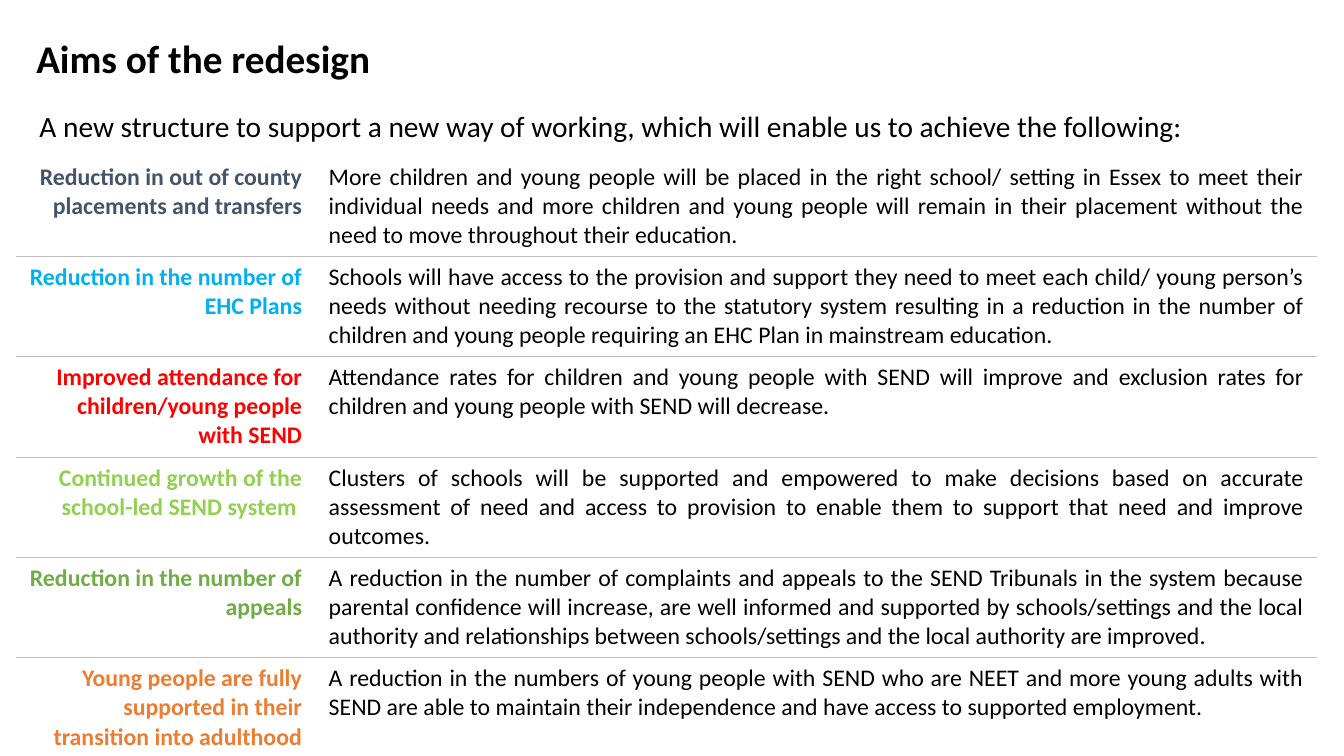
from dataclasses import dataclass

from lxml import etree
from pptx import Presentation
from pptx.dml.color import RGBColor
from pptx.enum.text import MSO_ANCHOR, MSO_AUTO_SIZE, PP_ALIGN
from pptx.oxml.ns import qn
from pptx.util import Pt

LEFT, RIGHT, JUSTIFY = PP_ALIGN.LEFT, PP_ALIGN.RIGHT, PP_ALIGN.JUSTIFY
TOP = MSO_ANCHOR.TOP
FIXED_SIZE = MSO_AUTO_SIZE.NONE
TITLE_ONLY = 5
FONT = "Calibri"
BLACK = "000000"
RULE_GREY = "BFBFBF"
INSET_X, INSET_Y = 9.5, 4.6
COLUMN_WIDTHS = (213.8, 715.7)


@dataclass(frozen=True)
class Aim:
    heading: str
    colour: str
    detail: str
    height: float = 70


AIMS = [
    Aim(
        "Reduction in out of county placements and transfers",
        "44546A",
        "More children and young people will be placed in the right school/ setting in Essex "
        "to meet their individual needs and more children and young people will remain in "
        "their placement without the need to move throughout their education.",
    ),
    Aim(
        "Reduction in the number of EHC Plans",
        "00B0F0",
        "Schools will have access to the provision and support they need to meet each child/ "
        "young person’s needs without needing recourse to the statutory system resulting in "
        "a reduction in the number of children and young people requiring an EHC Plan in "
        "mainstream education. ",
    ),
    Aim(
        "Improved attendance for children/young people with SEND",
        "FF0000",
        "Attendance rates for children and young people with SEND will improve and exclusion "
        "rates for children and young people with SEND will decrease. ",
        72,
    ),
    Aim(
        "Continued growth of the school-led SEND system ",
        "92D050",
        "Clusters of schools will be supported and empowered to make decisions based on "
        "accurate assessment of need and access to provision to enable them to support that "
        "need and improve outcomes.",
    ),
    Aim(
        "Reduction in the number of appeals",
        "70AD47",
        "A reduction in the number of complaints and appeals to the SEND Tribunals in the "
        "system because parental confidence will increase, are well informed and supported "
        "by schools/settings and the local authority and relationships between "
        "schools/settings and the local authority are improved.",
    ),
    Aim(
        "Young people are fully supported in their transition into adulthood",
        "ED7D31",
        "A reduction in the numbers of young people with SEND who are NEET and more young "
        "adults with SEND are able to maintain their independence and have access to "
        "supported employment.",
        72,
    ),
]


def rgb(colour: str) -> RGBColor:
    return RGBColor.from_string(colour)


def write(frame, text: str, size: float, colour: str, bold: bool, align) -> None:
    frame.word_wrap = True
    para = frame.paragraphs[0]
    para.alignment = align
    span = para.add_run()
    span.text = text
    span.font.name = FONT
    span.font.size = Pt(size)
    span.font.bold = bold
    span.font.color.rgb = rgb(colour)


def set_insets(target, horizontal: float, vertical: float) -> None:
    target.margin_left = target.margin_right = Pt(horizontal)
    target.margin_top = target.margin_bottom = Pt(vertical)


def set_borders(cell, ruled_sides: str) -> None:
    properties = cell._tc.get_or_add_tcPr()
    for position, side in enumerate("LRTB"):
        line = etree.Element(qn(f"a:ln{side}"))
        if side in ruled_sides:
            line.set("w", str(Pt(1)))
            fill = etree.SubElement(line, qn("a:solidFill"))
            etree.SubElement(fill, qn("a:srgbClr"), val=RULE_GREY)
        else:
            etree.SubElement(line, qn("a:noFill"))
        properties.insert(position, line)


def add_title(page) -> None:
    title = page.shapes.title
    title.left, title.top, title.width, title.height = Pt(18.7), Pt(20.9), Pt(756), Pt(41)
    frame = title.text_frame
    frame.auto_size = FIXED_SIZE
    frame.vertical_anchor = TOP
    set_insets(frame, 7.2, 3.6)
    write(frame, "Aims of the redesign", 28, BLACK, True, LEFT)


def add_introduction(page) -> None:
    box = page.shapes.add_textbox(Pt(18.7), Pt(72.7), Pt(899.3), Pt(35.3))
    set_insets(box.text_frame, INSET_X, INSET_Y)
    write(
        box.text_frame,
        "A new structure to support a new way of working, which will enable us to achieve "
        "the following:",
        21, BLACK, False, LEFT,
    )


def add_aims_table(page) -> None:
    height = sum(aim.height for aim in AIMS)
    table = page.shapes.add_table(
        len(AIMS), len(COLUMN_WIDTHS), Pt(11.5), Pt(111.6), Pt(sum(COLUMN_WIDTHS)), Pt(height)
    ).table
    table.first_row = table.horz_banding = False
    for column, width in zip(table.columns, COLUMN_WIDTHS):
        column.width = Pt(width)
    for index, aim in enumerate(AIMS):
        row = table.rows[index]
        row.height = Pt(aim.height)
        ruled_sides = ("T" if index > 0 else "") + ("B" if index < len(AIMS) - 1 else "")
        contents = [(aim.heading, aim.colour, True, RIGHT), (aim.detail, BLACK, False, JUSTIFY)]
        for cell, (text, colour, bold, align) in zip(row.cells, contents):
            cell.fill.background()
            cell.vertical_anchor = TOP
            set_insets(cell, INSET_X, INSET_Y)
            set_borders(cell, ruled_sides)
            write(cell.text_frame, text, 17, colour, bold, align)


def main() -> None:
    deck = Presentation()
    deck.slide_width, deck.slide_height = Pt(960), Pt(540)
    page = deck.slides.add_slide(deck.slide_layouts[TITLE_ONLY])
    add_title(page)
    add_aims_table(page)
    add_introduction(page)
    deck.save("out.pptx")


if __name__ == "__main__":
    main()
